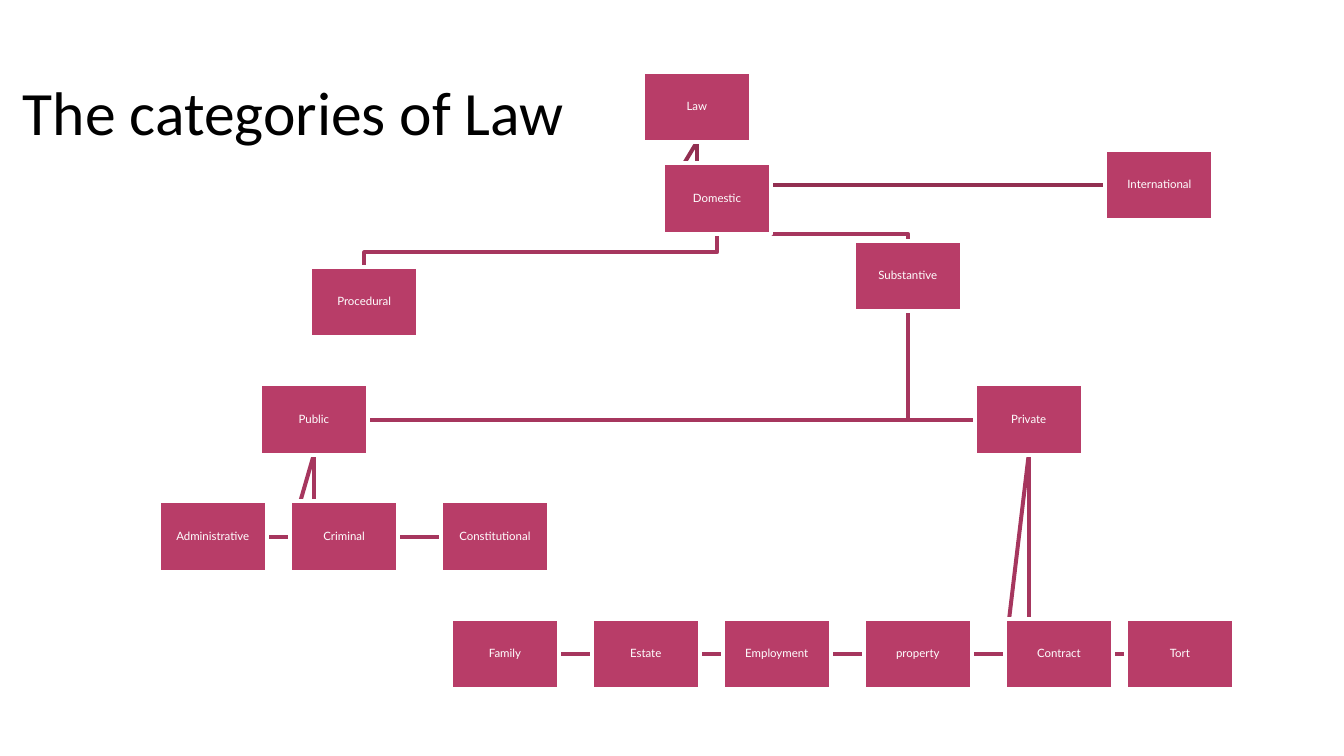
from dataclasses import dataclass

from lxml import etree
from pptx import Presentation
from pptx.dml.color import RGBColor
from pptx.enum.shapes import MSO_CONNECTOR, MSO_SHAPE
from pptx.enum.text import MSO_ANCHOR, MSO_AUTO_SIZE, PP_ALIGN
from pptx.oxml.ns import qn
from pptx.util import Cm, Pt

RECTANGLE = MSO_SHAPE.RECTANGLE
STRAIGHT = MSO_CONNECTOR.STRAIGHT
MIDDLE = MSO_ANCHOR.MIDDLE
LEFT, CENTER = PP_ALIGN.LEFT, PP_ALIGN.CENTER
NO_AUTOFIT = MSO_AUTO_SIZE.NONE
TITLE_ONLY = 5


@dataclass(frozen=True)
class Theme:
    box: RGBColor = RGBColor(0xB8, 0x3D, 0x68)
    top_line: RGBColor = RGBColor(0x92, 0x2F, 0x51)
    line: RGBColor = RGBColor(0xA6, 0x36, 0x5E)
    white: RGBColor = RGBColor(0xFF, 0xFF, 0xFF)
    black: RGBColor = RGBColor(0x00, 0x00, 0x00)
    title_font: str = "Calibri"
    box_font: str = "Lato"
    title_size: Pt = Pt(48.5)
    box_size: Pt = Pt(9)
    line_width: Pt = Pt(3.15)


THEME = Theme()

# Boxes and bends, in centimetres
BOX_W, BOX_H = 3.0, 1.95
BEND_GAP = 0.41

# Left and top of each box
BOXES = {
    "Law": (17.86, 2.0),
    "Domestic": (18.42, 4.54),
    "International": (30.71, 4.17),
    "Procedural": (8.62, 7.42),
    "Substantive": (23.72, 6.7),
    "Public": (7.22, 10.68),
    "Private": (27.08, 10.68),
    "Administrative": (4.41, 13.93),
    "Criminal": (8.06, 13.93),
    "Constitutional": (12.25, 13.93),
    "Family": (12.53, 17.19),
    "Estate": (16.44, 17.19),
    "Employment": (20.08, 17.19),
    "property": (24.0, 17.19),
    "Contract": (27.92, 17.19),
    "Tort": (31.28, 17.19),
}

SIDE_BRANCHES = {
    "Law": ["International", "Domestic"],
    "Substantive": ["Public", "Private"],
    "Public": ["Administrative", "Criminal", "Constitutional"],
    "Private": ["Family", "Estate", "Employment", "property", "Contract", "Tort"],
}
TOP_BRANCHES = {"Domestic": ["Procedural", "Substantive"]}


def add_run(p, text, font, size, color):
    r = p.add_run()
    r.text = text
    r.font.name = font
    r.font.size = size
    r.font.color.rgb = color


def add_title(s, text):
    sp = s.shapes.title
    sp.left, sp.top, sp.width, sp.height = Cm(0.38), Cm(1.19), Cm(32.21), Cm(4.06)
    tf = sp.text_frame
    tf.auto_size = NO_AUTOFIT
    tf.vertical_anchor = MIDDLE
    p = tf.paragraphs[0]
    p.alignment = LEFT
    p.line_spacing = 0.9
    add_run(p, text, THEME.title_font, THEME.title_size, THEME.black)


def add_box(s, text, left, top):
    sp = s.shapes.add_shape(RECTANGLE, Cm(left), Cm(top), Cm(BOX_W), Cm(BOX_H))
    sp.shadow.inherit = False
    sp.fill.solid()
    sp.fill.fore_color.rgb = THEME.box
    sp.line.color.rgb = THEME.white
    sp.line.width = THEME.line_width
    tf = sp.text_frame
    tf.word_wrap = True
    tf.vertical_anchor = MIDDLE
    tf.margin_left = tf.margin_right = tf.margin_top = tf.margin_bottom = Cm(0.02)
    p = tf.paragraphs[0]
    p.alignment = CENTER
    p.line_spacing = 0.9
    p.space_after = Pt(4)
    add_run(p, text, THEME.box_font, THEME.box_size, THEME.white)


def add_path(s, points, color):
    """Draw a straight line through two points, or a bent one through more."""
    start, *rest = [(Cm(x), Cm(y)) for x, y in points]
    if len(rest) == 1:
        sp = s.shapes.add_connector(STRAIGHT, *start, *rest[0])
        etree.SubElement(sp._element.spPr, qn("a:effectLst"))
    else:
        builder = s.shapes.build_freeform(*start, scale=1.0)
        builder.add_line_segments(rest, close=False)
        sp = builder.convert_to_shape()
        sp.shadow.inherit = False
        sp.fill.background()
    sp.line.color.rgb = color
    sp.line.width = THEME.line_width


def bottom_center(name):
    left, top = BOXES[name]
    return left + BOX_W / 2, top + BOX_H


def side_route(parent, child):
    """Go down and then sideways; slant to the left edge of a box right below."""
    x, y = bottom_center(parent)
    left, top = BOXES[child]
    right, middle = left + BOX_W, top + BOX_H / 2
    if left < x < right:
        return [(x, y), (left, middle)]
    return [(x, y), (x, middle), (left if left > x else right, middle)]


def top_route(parent, child):
    """Bend a little above the child and enter it from the top."""
    x, y = bottom_center(parent)
    left, top = BOXES[child]
    child_x = left + BOX_W / 2
    bend = max(y, top - BEND_GAP)
    points = [(x, y), (x, bend), (child_x, bend), (child_x, top)]
    return list(dict.fromkeys(points))


def add_branches(s, branches, route):
    for parent, children in branches.items():
        color = THEME.top_line if parent == "Law" else THEME.line
        for child in children:
            add_path(s, route(parent, child), color)


def main():
    prs = Presentation()
    prs.slide_width, prs.slide_height = Cm(37.34), Cm(21.0)
    s = prs.slides.add_slide(prs.slide_layouts[TITLE_ONLY])
    add_title(s, "The categories of Law")
    add_branches(s, SIDE_BRANCHES, side_route)
    add_branches(s, TOP_BRANCHES, top_route)
    for name, (left, top) in BOXES.items():
        add_box(s, name, left, top)
    prs.save("out.pptx")


if __name__ == "__main__":
    main()
